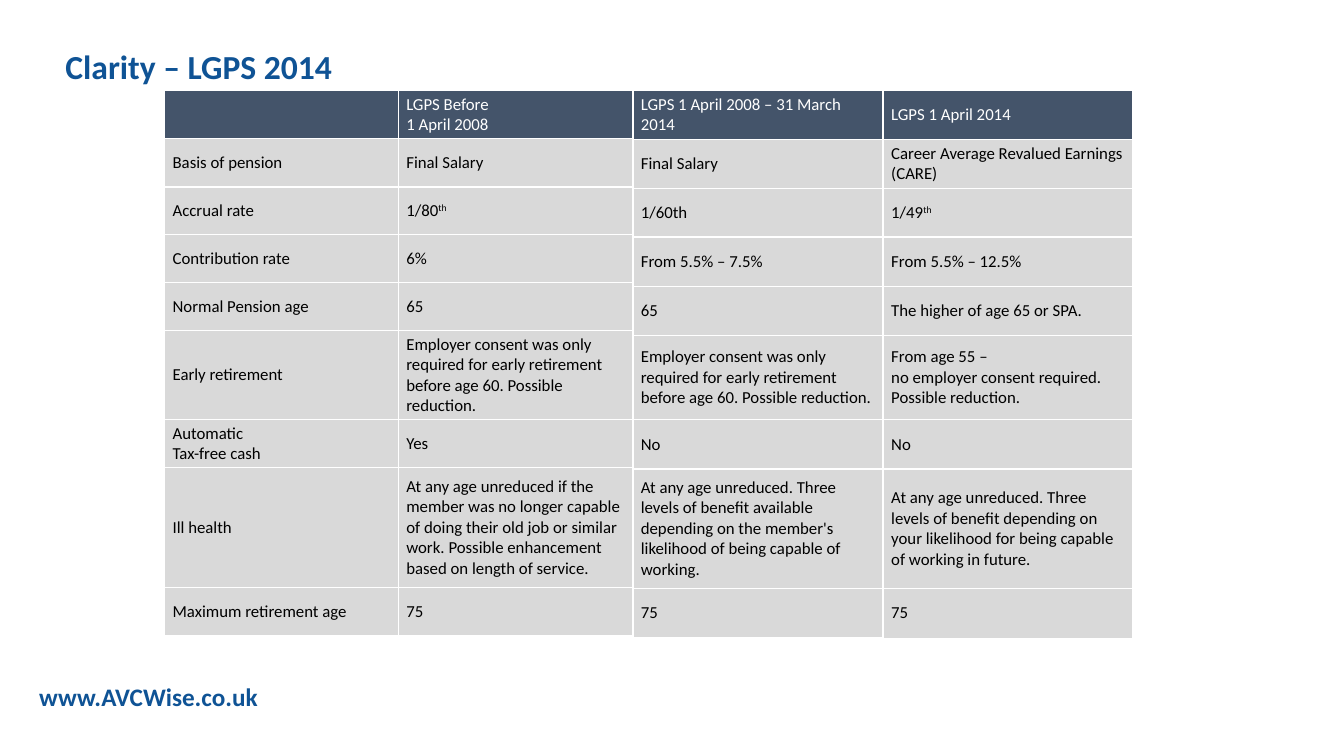
from pptx import Presentation
from pptx.dml.color import RGBColor
from pptx.enum import text
from pptx.util import Cm, Pt

COLORS = {"blue": "0F5395", "header": "44546A", "body": "D9D9D9",
          "white": "FFFFFF", "black": "000000"}


def style_font(para, size, color, bold):
    para.font.name = "Calibri"
    para.font.size = Pt(size)
    para.font.bold = bold
    para.font.color.rgb = RGBColor.from_string(COLORS[color])


def add_heading(page, words, left, top, width, height, size):
    box = page.shapes.add_textbox(Cm(left), Cm(top), Cm(width), Cm(height))
    box.text_frame.word_wrap = True
    para = box.text_frame.paragraphs[0]
    para.text = words
    style_font(para, size, "blue", True)
    return para


deck = Presentation()
deck.slide_width, deck.slide_height = Cm(33.87), Cm(19.05)
page = deck.slides.add_slide(deck.slide_layouts[6])

add_heading(page, "www.AVCWise.co.uk", 0.74, 17.04, 7.85, 1.02, 18)

# "^" starts a superscript, "\v" breaks a line, "\n" starts a paragraph
schemes = [
    {"left": 4.15, "col_width": 5.89,
     "heights": [1.22, 1.22, 1.2, 1.2, 1.22, 2.16, 1.22, 3.02, 1.22],
     "columns": [
         ["", "Basis of pension", "Accrual rate", "Contribution rate",
          "Normal Pension age", "Early retirement",
          "Automatic\nTax-free cash", "Ill health",
          "Maximum retirement age"],
         ["LGPS Before \v1 April 2008", "Final Salary", "1/80^th", "6%", "65",
          "Employer consent was only required for early retirement before "
          "age 60. Possible reduction.",
          "Yes",
          "At any age unreduced if the member was no longer capable of doing "
          "their old job or similar work. Possible enhancement based on "
          "length of service.",
          "75"]]},
    {"left": 15.95, "col_width": 6.28,
     "heights": [1.24, 1.24, 1.22, 1.24, 1.24, 2.13, 1.24, 3.0, 1.24],
     "columns": [
         ["LGPS 1 April 2008 – 31 March 2014", "Final Salary", "1/60th",
          "From 5.5% – 7.5%", "65",
          "Employer consent was only required for early retirement before "
          "age 60. Possible reduction.",
          "No",
          "At any age unreduced. Three levels of benefit available depending "
          "on the member's likelihood of being capable of working.",
          "75"]]},
    {"left": 22.26, "col_width": 6.28,
     "heights": [1.24, 1.24, 1.22, 1.24, 1.24, 2.13, 1.24, 3.0, 1.26],
     "columns": [
         ["LGPS 1 April 2014", "Career Average Revalued Earnings (CARE)",
          "1/49^th", "From 5.5% – 12.5%", "The higher of age 65 or SPA.",
          "From age 55 – \vno employer consent required. Possible reduction.",
          "No",
          "At any age unreduced. Three levels of benefit depending on your "
          "likelihood for being capable of working in future.",
          "75"]]},
]

for scheme in schemes:
    columns, heights = scheme["columns"], scheme["heights"]
    table = page.shapes.add_table(
        len(heights), len(columns), Cm(scheme["left"]), Cm(2.27),
        Cm(scheme["col_width"] * len(columns)), Cm(sum(heights))).table
    table.horz_banding = False
    for row, height in zip(table.rows, heights):
        row.height = Cm(height)
    for c, entries in enumerate(columns):
        table.columns[c].width = Cm(scheme["col_width"])
        for r, entry in enumerate(entries):
            cell = table.cell(r, c)
            cell.vertical_anchor = text.MSO_ANCHOR.MIDDLE
            cell.margin_left = cell.margin_right = Cm(0.2)
            cell.margin_top = cell.margin_bottom = Cm(0.1)
            cell.fill.solid()
            cell.fill.fore_color.rgb = RGBColor.from_string(
                COLORS["body" if r else "header"])
            base, _, raised = entry.partition("^")
            cell.text_frame.text = base
            for para in cell.text_frame.paragraphs:
                style_font(para, 12, "black" if r else "white", False)
            if raised:
                span = cell.text_frame.paragraphs[0].add_run()
                span.text = raised
                span._r.get_or_add_rPr().set("baseline", "30000")

title = add_heading(page, "Clarity – LGPS 2014", 1.4, 1.14, 31.55, 1.83, 24)
title.line_spacing = 0.9

deck.save("out.pptx")
